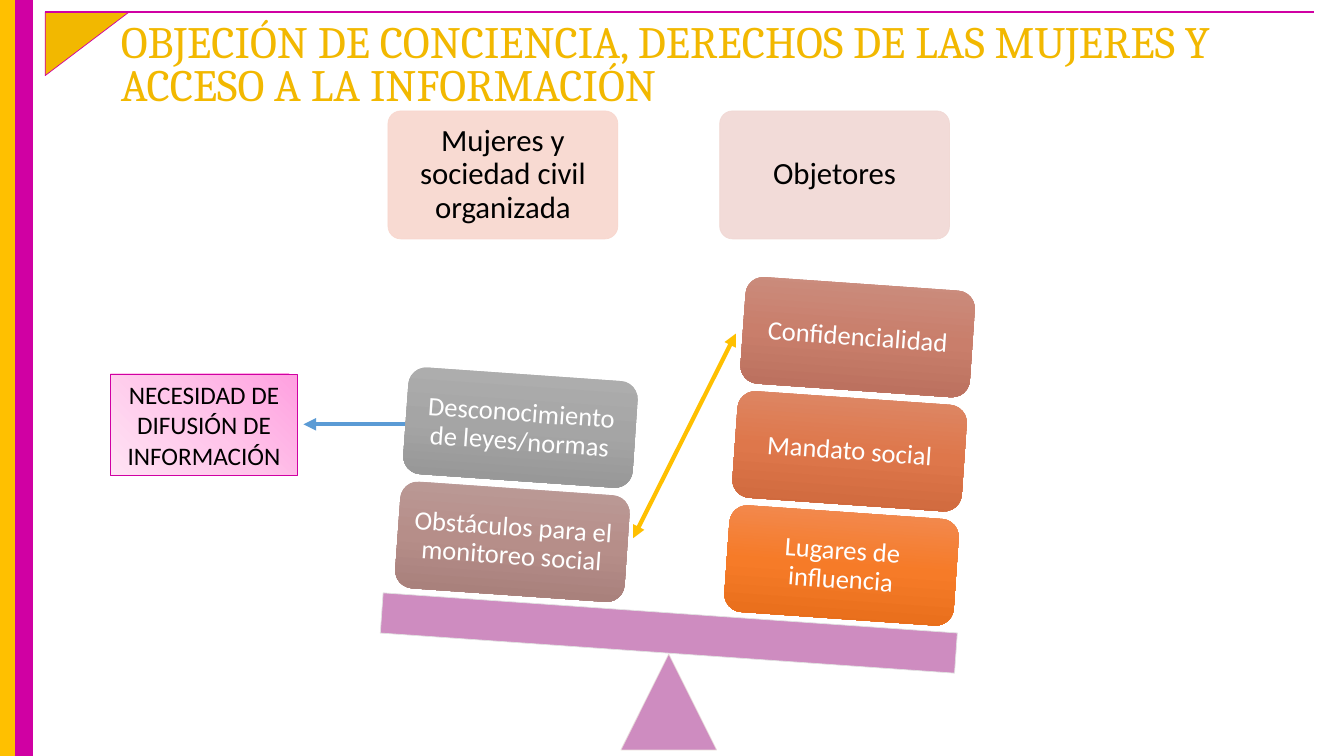
from copy import deepcopy

from pptx import Presentation
from pptx.dml.color import RGBColor
from pptx.enum.shapes import MSO_CONNECTOR, MSO_SHAPE
from pptx.enum.text import MSO_ANCHOR, PP_ALIGN
from pptx.oxml.ns import qn
from pptx.util import Inches, Pt
from lxml.etree import SubElement

AMBER = RGBColor(0xFF, 0xC0, 0x00)
GOLD = RGBColor(0xF2, 0xB8, 0x00)
MAGENTA = RGBColor(0xD0, 0x00, 0xA3)
BLUE = RGBColor(0x5B, 0x9B, 0xD5)
ORCHID = RGBColor(0xCE, 0x8C, 0xC0)
PALE_ROSE = RGBColor(0xE9, 0xDB, 0xDA)
PALE_GRAY = RGBColor(0xE1, 0xE1, 0xE1)
PEACH = RGBColor(0xF8, 0xD7, 0xCE)
ROSE = RGBColor(0xF1, 0xD8, 0xD4)
BLACK = RGBColor(0x00, 0x00, 0x00)
WHITE = RGBColor(0xFF, 0xFF, 0xFF)
ORANGE_FADE = (RGBColor(0xF1, 0x8C, 0x57), RGBColor(0xF6, 0x7B, 0x28), RGBColor(0xE5, 0x6C, 0x19))
RUST_FADE = (RGBColor(0xDD, 0x8A, 0x6A), RGBColor(0xDE, 0x77, 0x4B), RGBColor(0xCD, 0x67, 0x3B))
CLAY_FADE = (RGBColor(0xCB, 0x8F, 0x81), RGBColor(0xC9, 0x7E, 0x6B), RGBColor(0xB7, 0x6D, 0x5B))
MAUVE_FADE = (RGBColor(0xBC, 0x9C, 0x99), RGBColor(0xB6, 0x8E, 0x89), RGBColor(0xA4, 0x7C, 0x78))
GRAY_FADE = (RGBColor(0xAF, 0xAF, 0xAF), RGBColor(0xA5, 0xA5, 0xA5), RGBColor(0x93, 0x93, 0x93))
PINK_FADE = (RGBColor(0xFF, 0xA0, 0xE0), RGBColor(0xFF, 0xC6, 0xEA), RGBColor(0xFF, 0xE3, 0xF4))

TILT = 4
TILE_W, TILE_H = 17.1, 14.13
STEP_X, STEP_Y = 0.6, 15.1


class BalanceSlide:
    heading_font = "Cambria"
    body_font = "Calibri"

    def __init__(self, prs):
        self.width, self.height = prs.slide_width, prs.slide_height
        self.shapes = prs.slides.add_slide(prs.slide_layouts[6]).shapes

    def x(self, percent):
        return round(self.width * percent / 100)

    def y(self, percent):
        return round(self.height * percent / 100)

    def box(self, left, top, width, height):
        return self.x(left), self.y(top), self.x(width), self.y(height)

    def shape(self, kind, box, fill, line=None, weight=0.5, rotation=0, alpha=None, angle=270):
        sp = self.shapes.add_shape(kind, *self.box(*box))
        sp.shadow.inherit = False
        sp.rotation = rotation
        if isinstance(fill, RGBColor):
            sp.fill.solid()
            sp.fill.fore_color.rgb = fill
        else:
            self.fade(sp, fill, angle)
        if line is None:
            sp.line.fill.background()
        else:
            sp.line.color.rgb = line
            sp.line.width = Pt(weight)
        if alpha:
            for color in sp.element.spPr.iter(qn("a:srgbClr")):
                SubElement(color, qn("a:alpha"), val=str(alpha * 1000))
        return sp

    def fade(self, sp, colors, angle):
        sp.fill.gradient()
        sp.fill.gradient_angle = angle
        stops = sp.element.spPr.find(qn("a:gradFill")).find(qn("a:gsLst"))
        stops.append(deepcopy(stops[0]))
        for i, (stop, color) in enumerate(zip(sp.fill.gradient_stops, colors)):
            stop.position = i / 2
            stop.color.rgb = color

    def text(self, sp, words, size, color, font=None, spacing=1.0, align=PP_ALIGN.CENTER,
             anchor=MSO_ANCHOR.MIDDLE, inset=(0.1, 0.05)):
        tf = sp.text_frame
        side, edge = (Inches(n) for n in inset)
        frame = {"word_wrap": True, "vertical_anchor": anchor, "margin_left": side,
                 "margin_right": side, "margin_top": edge, "margin_bottom": edge}
        for name, value in frame.items():
            setattr(tf, name, value)
        p = tf.paragraphs[0]
        p.alignment, p.line_spacing = align, spacing
        r = p.add_run()
        r.text = words
        for name, value in {"name": font or self.body_font, "size": Pt(size)}.items():
            setattr(r.font, name, value)
        r.font.color.rgb = color

    def title(self, words, box):
        sp = self.shapes.add_textbox(*self.box(*box))
        self.text(sp, words, 32, GOLD, self.heading_font, 0.8, PP_ALIGN.LEFT, MSO_ANCHOR.TOP)

    def header(self, words, left, color):
        sp = self.shape(MSO_SHAPE.ROUNDED_RECTANGLE, (left, 14.67, TILE_W, 16.93),
                        color, color, alpha=90)
        sp.adjustments[0] = 0.1
        self.text(sp, words, 22, BLACK, spacing=0.9, inset=(0.09, 0.09))

    def stack(self, left, bottom_top, tiles):
        for i, (words, colors) in enumerate(tiles):
            box = (left + i * STEP_X, bottom_top - i * STEP_Y, TILE_W, TILE_H)
            sp = self.shape(MSO_SHAPE.ROUNDED_RECTANGLE, box, colors, rotation=TILT)
            self.text(sp, words, 19, WHITE, spacing=0.9, inset=(0.08, 0.08))

    def line(self, start, end, color, weight, ends=()):
        cn = self.shapes.add_connector(MSO_CONNECTOR.STRAIGHT, self.x(start[0]), self.y(start[1]),
                                       self.x(end[0]), self.y(end[1]))
        cn.line.color.rgb = color
        cn.line.width = Pt(weight)
        ln = cn.element.spPr.find(qn("a:ln"))
        for tag in ends:
            SubElement(ln, qn(tag), type="triangle")
        SubElement(cn.element.spPr, qn("a:effectLst"))


def main():
    prs = Presentation()
    prs.slide_width, prs.slide_height = Inches(13.33), Inches(7.5)
    s = BalanceSlide(prs)

    for left, color in ((-0.08, AMBER), (1.2, MAGENTA)):
        s.shape(MSO_SHAPE.RECTANGLE, (left, 0, 1.2, 100), color, color, 1)
    s.line((30.6, 56.13), (22.58, 56.13), BLUE, 3, ("a:tailEnd",))
    s.shape(MSO_SHAPE.RIGHT_TRIANGLE, (4.12, 0.27, 4.72, 11.07), GOLD, MAGENTA, rotation=90)
    s.line((3.38, 1.6), (97.75, 1.6), MAGENTA, 1)
    s.title("OBJECIÓN DE CONCIENCIA, DERECHOS DE LAS MUJERES Y ACCESO A LA INFORMACIÓN",
            (8.25, 2.53, 87.52, 12.8))

    s.header("Mujeres y sociedad civil organizada", 28.87, PEACH)
    s.header("Objetores", 53.55, ROSE)

    s.shape(MSO_SHAPE.ISOSCELES_TRIANGLE, (46.2, 86.53, 7.12, 12.67), ORCHID, PALE_ROSE)
    s.shape(MSO_SHAPE.RECTANGLE, (28.35, 81.07, 42.83, 5.33), ORCHID, PALE_GRAY, rotation=TILT)
    s.stack(54.07, 67.73, (("Lugares de influencia", ORANGE_FADE),
                           ("Mandato social", RUST_FADE),
                           ("Confidencialidad", CLAY_FADE)))
    s.stack(29.58, 64.6, (("Obstáculos para el monitoreo social", MAUVE_FADE),
                          ("Desconocimiento de leyes/normas", GRAY_FADE)))

    need = s.shape(MSO_SHAPE.RECTANGLE, (8.25, 49.47, 13.87, 13.47), PINK_FADE, MAGENTA, angle=225)
    s.text(need, "NECESIDAD DE DIFUSIÓN DE INFORMACIÓN", 18, BLACK)
    s.line((47.1, 71.2), (54.75, 44.13), AMBER, 3, ("a:headEnd", "a:tailEnd"))

    prs.save("out.pptx")


if __name__ == "__main__":
    main()
